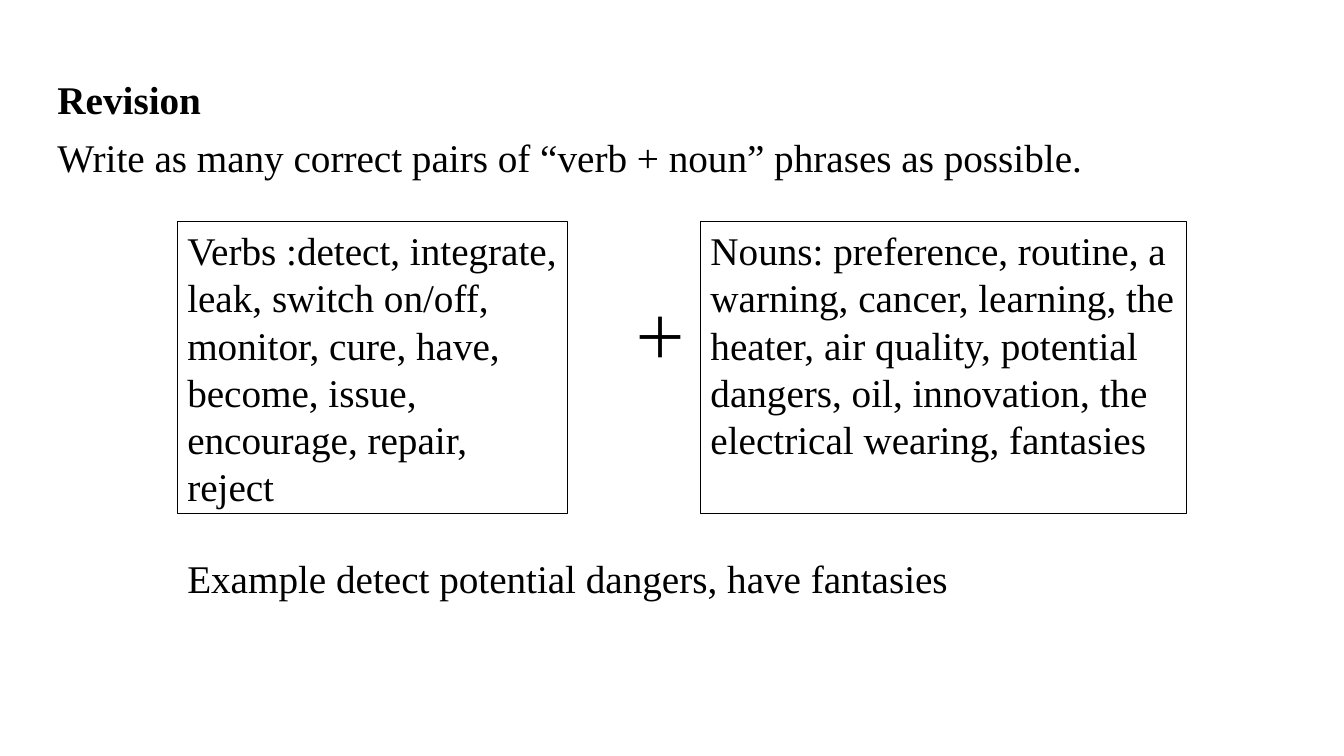
from pptx import Presentation
from pptx.dml.color import RGBColor
from pptx.enum.shapes import MSO_SHAPE
from pptx.enum.text import MSO_ANCHOR, MSO_AUTO_SIZE, PP_ALIGN
from pptx.util import Pt

BLACK = RGBColor(0, 0, 0)
WHITE = RGBColor(255, 255, 255)
RECT = MSO_SHAPE.RECTANGLE
TOP = MSO_ANCHOR.TOP
LEFT = PP_ALIGN.LEFT
GROW = MSO_AUTO_SIZE.SHAPE_TO_FIT_TEXT
FIXED = MSO_AUTO_SIZE.NONE

TITLE_ONLY = 5
EDGE = 33.84
BOX_LEFT = 126.72
BOX_TOP = 158.4
BOX_HIGH = 208.08
LINE_HIGH = 41.04


class Deck:
    font = "Times New Roman"
    size = 28

    def __init__(self, wide, high):
        self.prs = Presentation()
        self.prs.slide_width = Pt(wide)
        self.prs.slide_height = Pt(high)
        self.slide = self.prs.slides.add_slide(self.prs.slide_layouts[TITLE_ONLY])

    def set_text(self, shape, text, fit=FIXED, font=font, size=size, bold=False):
        frame = shape.text_frame
        frame.text = text
        frame.word_wrap = True
        frame.auto_size = fit
        frame.vertical_anchor = TOP
        para = frame.paragraphs[0]
        para.alignment = LEFT
        for run in para.runs:
            run.font.name = font
            run.font.size = Pt(size)
            run.font.bold = bold
            run.font.color.rgb = BLACK

    def title(self, text, x, y, w, h):
        shape = self.slide.shapes.title
        shape.left, shape.top, shape.width, shape.height = map(Pt, (x, y, w, h))
        self.set_text(shape, text, fit=GROW, bold=True)

    def label(self, text, x, y, w, h, **style):
        shape = self.slide.shapes.add_textbox(*map(Pt, (x, y, w, h)))
        self.set_text(shape, text, **style)

    def box(self, text, x, y, w, h):
        shape = self.slide.shapes.add_shape(RECT, *map(Pt, (x, y, w, h)))
        shape.shadow.inherit = False
        shape.fill.solid()
        shape.fill.fore_color.rgb = WHITE
        shape.line.color.rgb = BLACK
        shape.line.width = Pt(0.75)
        self.set_text(shape, text)


def main():
    deck = Deck(960, 540)
    deck.title("Revision", EDGE, 50.4, 400.32, LINE_HIGH)
    deck.label("Write as many correct pairs of “verb + noun” phrases as possible.",
               EDGE, 91.44, 813.6, LINE_HIGH, fit=GROW)
    deck.box("Verbs :detect, integrate, leak, switch on/off, monitor, cure, have, "
             "become, issue, encourage, repair, reject",
             BOX_LEFT, BOX_TOP, 278.64, BOX_HIGH)
    deck.label("＋", 444.96, 212.4, 56.16, 65.52, font="Calibri", size=40)
    deck.box("Nouns: preference, routine, a warning, cancer, learning, the heater, "
             "air quality, potential dangers, oil, innovation, the electrical "
             "wearing, fantasies",
             500.4, BOX_TOP, 347.04, BOX_HIGH)
    deck.label("Example detect potential dangers, have fantasies",
               BOX_LEFT, 392.4, 667.44, LINE_HIGH, fit=GROW)
    deck.prs.save("out.pptx")


if __name__ == "__main__":
    main()
